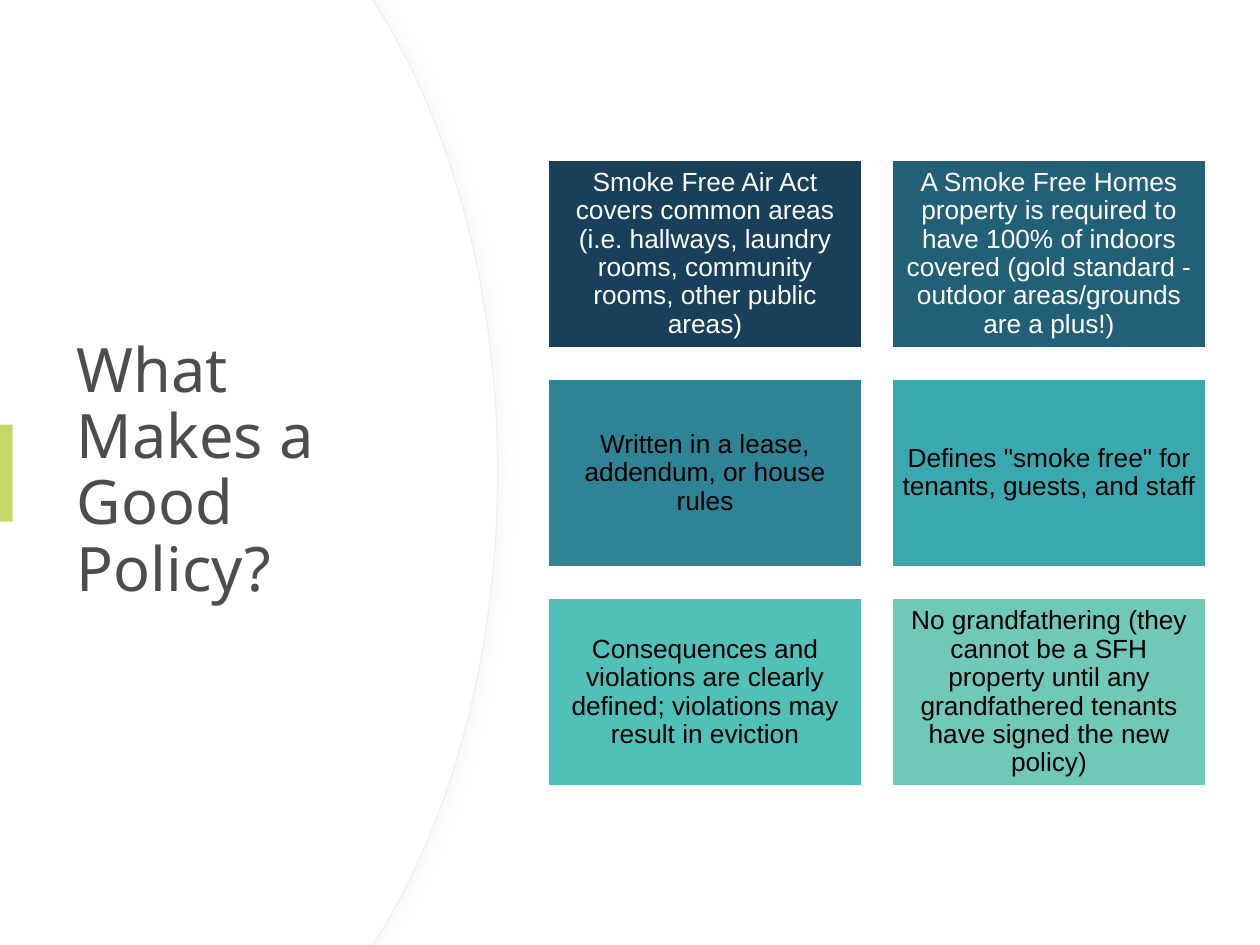
"""Build the slide on what makes a good smoke-free policy."""
from lxml.etree import SubElement
from pptx import Presentation
from pptx.dml.color import RGBColor
from pptx.enum.shapes import MSO_SHAPE
from pptx.enum.text import MSO_ANCHOR, PP_ALIGN
from pptx.oxml.ns import qn
from pptx.util import Inches, Pt

WHITE = RGBColor(0xFF, 0xFF, 0xFF)
BLACK = RGBColor(0x00, 0x00, 0x00)
GRAY = RGBColor(0x4B, 0x4D, 0x4F)
EDGE = RGBColor(0xEF, 0xEF, 0xEF)
SHADOW = RGBColor(0xD9, 0xD9, 0xD9)
LIME = RGBColor(0xC6, 0xD6, 0x68)

TITLE = "What Makes a Good Policy?"
CARDS = [
    ("Smoke Free Air Act covers common areas (i.e. hallways, laundry rooms, "
     "community rooms, other public areas)", RGBColor(0x18, 0x40, 0x5B), WHITE),
    ("A Smoke Free Homes property is required to have 100% of indoors covered "
     "(gold standard - outdoor areas/grounds are a plus!)",
     RGBColor(0x22, 0x60, 0x78), WHITE),
    ("Written in a lease, addendum, or house rules",
     RGBColor(0x2E, 0x83, 0x94), BLACK),
    ('Defines "smoke free" for tenants, guests, and staff',
     RGBColor(0x3A, 0xA9, 0xAF), BLACK),
    ("Consequences and violations are clearly defined; violations may result "
     "in eviction", RGBColor(0x50, 0xC0, 0xB9), BLACK),
    ("No grandfathering (they cannot be a SFH property until any grandfathered "
     "tenants have signed the new policy)", RGBColor(0x70, 0xC8, 0xB8), BLACK),
]
COLS = 2
LEFT, TOP = 4.35, 1.27
CARD_W, CARD_H = 2.49, 1.49
STEP_X, STEP_Y = 2.73, 1.74
SLIDE_H = 7.5
UPPER_EDGE = [(2.96, 0), (3.01, 0.08), (3.59, 1.02), (3.95, 2.32), (3.95, 3.75)]
CURVE_STARTS = (2, 5)


def add_panel(s, shift):
    lower = [(x, SLIDE_H - y) for x, y in reversed(UPPER_EDGE[:-1])]
    outline = [(x - shift, y) for x, y in UPPER_EDGE + lower] + [(0, SLIDE_H)]
    fb = s.shapes.build_freeform(0, 0)
    fb.add_line_segments([(Inches(x), Inches(y)) for x, y in outline])
    sp = fb.convert_to_shape()
    lines = list(sp._element.iter(qn("a:lnTo")))
    for start in CURVE_STARTS:
        curve_lines = lines[start:start + 3]
        curve = curve_lines[0].makeelement(qn("a:cubicBezTo"))
        curve_lines[0].addprevious(curve)
        for line in curve_lines:
            curve.append(line[0])
            line.getparent().remove(line)
    style(sp, WHITE)
    return sp


def style(sp, color):
    sp.shadow.inherit = False
    sp.fill.solid()
    sp.fill.fore_color.rgb = color
    sp.line.fill.background()


def set_line(sp, color, width):
    sp.line.color.rgb = color
    sp.line.width = Pt(width)


def add_shadow(sp):
    effects = sp._element.spPr.find(qn("a:effectLst"))
    shadow = SubElement(effects, qn("a:outerShdw"), blurRad=str(Pt(7)),
                        dist=str(Pt(3)), dir="0", algn="l", rotWithShape="0")
    color = SubElement(shadow, qn("a:srgbClr"), val=str(SHADOW))
    SubElement(color, qn("a:alpha"), val="15000")


def set_text(sp, text, font, size, color, align):
    tf = sp.text_frame
    tf.word_wrap = True
    tf.vertical_anchor = MSO_ANCHOR.MIDDLE
    tf.text = text
    p = tf.paragraphs[0]
    p.alignment = align
    p.line_spacing = 0.9
    r = p.runs[0]
    r.font.name = font
    r.font.size = Pt(size)
    r.font.color.rgb = color


def add_card(s, index, text, fill, color):
    row, col = divmod(index, COLS)
    sp = s.shapes.add_shape(
        MSO_SHAPE.RECTANGLE, Inches(LEFT + col * STEP_X),
        Inches(TOP + row * STEP_Y), Inches(CARD_W), Inches(CARD_H))
    style(sp, fill)
    set_line(sp, WHITE, 1)
    tf = sp.text_frame
    tf.margin_left = tf.margin_right = Inches(0.06)
    tf.margin_top = tf.margin_bottom = Inches(0.06)
    set_text(sp, text, "Arial", 15, color, PP_ALIGN.CENTER)


def main():
    prs = Presentation()
    prs.slide_width, prs.slide_height = Inches(10), Inches(SLIDE_H)
    s = prs.slides.add_slide(prs.slide_layouts[6])

    panel = add_panel(s, 0)
    set_line(panel, EDGE, 0.75)
    add_shadow(panel)
    add_panel(s, 0.01)

    title = s.shapes.add_textbox(Inches(0.51), Inches(1.27), Inches(2.96), Inches(4.95))
    set_text(title, TITLE, "Noto Sans", 35, GRAY, PP_ALIGN.LEFT)

    accent = s.shapes.add_shape(
        MSO_SHAPE.RECTANGLE, 0, Inches(3.37), Inches(0.1), Inches(0.77))
    style(accent, LIME)

    for i, card in enumerate(CARDS):
        add_card(s, i, *card)

    prs.save("out.pptx")


if __name__ == "__main__":
    main()
